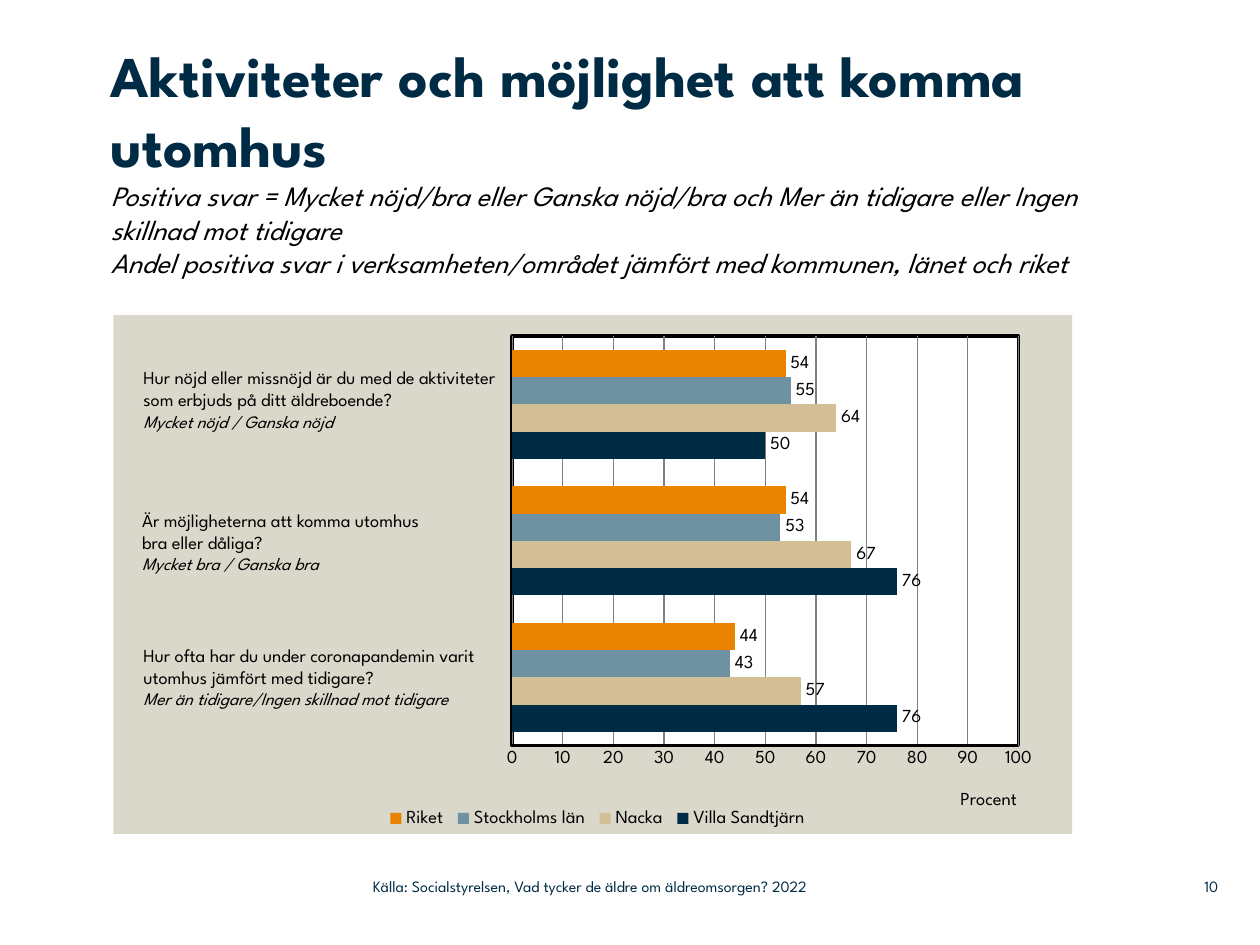
from dataclasses import dataclass

from lxml import etree
from pptx import Presentation
from pptx.chart.data import CategoryChartData
from pptx.dml.color import RGBColor as RGB
from pptx.enum.chart import XL_CHART_TYPE as ChartType
from pptx.enum.chart import XL_LABEL_POSITION as LabelPos
from pptx.enum.chart import XL_LEGEND_POSITION as LegendPos
from pptx.enum.chart import XL_TICK_MARK as Tick
from pptx.enum.text import MSO_ANCHOR as Anchor
from pptx.enum.text import PP_ALIGN as Align
from pptx.oxml import parse_xml
from pptx.oxml.ns import nsdecls, qn
from pptx.util import Pt


@dataclass(frozen=True)
class Theme:
    face: str = "League Spartan"
    navy: RGB = RGB(0x00, 0x2B, 0x45)
    black: RGB = RGB(0, 0, 0)
    white: RGB = RGB(0xFF, 0xFF, 0xFF)
    panel: RGB = RGB(0xDA, 0xD7, 0xCB)
    sand: RGB = RGB(0xD3, 0xBF, 0x96)
    steel: RGB = RGB(0x6F, 0x92, 0xA2)
    orange: RGB = RGB(0xE9, 0x83, 0x00)
    grid: RGB = RGB(0x80, 0x80, 0x80)
    title: float = 33
    subtitle: float = 16
    label: float = 10.5
    answer: float = 10
    footer: float = 9


T = Theme()


def add_text(box, lines, inset=0, anchor=Anchor.TOP, align=Align.LEFT):
    """Add a text box; each line is (text, size, colour, bold, italic)."""
    tf = s.shapes.add_textbox(*map(Pt, box)).text_frame
    tf.word_wrap = True
    tf.vertical_anchor = anchor
    tf.margin_left = tf.margin_right = Pt(inset)
    tf.margin_top = tf.margin_bottom = Pt(inset / 2)
    for i, (text, size, color, bold, italic) in enumerate(lines):
        p = tf.paragraphs[0] if i == 0 else tf.add_paragraph()
        p.text = text
        p.alignment = align
        p.font.name, p.font.size = T.face, Pt(size)
        p.font.bold, p.font.italic = bold, italic
        p.font.color.rgb = color


def place(element, before, target=None, **fractions):
    """Give a chart part a manual layout, in fractions of the chart."""
    for old in element.findall(qn("c:layout")):
        element.remove(old)
    layout = parse_xml(f"<c:layout {nsdecls('c')}><c:manualLayout/></c:layout>")
    values = {"layoutTarget": target} if target else {}
    values |= {"xMode": "edge", "yMode": "edge"} | fractions
    for tag, value in values.items():
        etree.SubElement(layout[0], qn(f"c:{tag}")).set("val", str(value))
    if before is None:
        element.insert(0, layout)
    else:
        element.find(qn(before)).addnext(layout)


prs = Presentation()
prs.slide_width, prs.slide_height = Pt(720), Pt(540)
s = prs.slides.add_slide(prs.slide_layouts[6])

# Title and subtitle
add_text((63.4, 23, 561.6, 136), [
    ("Aktiviteter och möjlighet att komma utomhus", T.title, T.navy, True, False),
    ("Positiva svar = Mycket nöjd/bra eller Ganska nöjd/bra och Mer än tidigare "
     "eller Ingen skillnad mot tidigare", T.subtitle, T.black, False, True),
    ("Andel positiva svar i verksamheten/området jämfört med kommunen, länet och riket",
     T.subtitle, T.black, False, True),
])

# Bar chart
series = [
    ("Villa Sandtjärn", (76, 76, 50), T.navy),
    ("Nacka", (57, 67, 64), T.sand),
    ("Stockholms län", (43, 53, 55), T.steel),
    ("Riket", (44, 54, 54), T.orange),
]
data = CategoryChartData()
data.categories = ["1", "2", "3"]
for name, values, _ in series:
    data.add_series(name, values)
chart = s.shapes.add_chart(
    ChartType.BAR_CLUSTERED, *map(Pt, (64.8, 180, 547.9, 296.6)), data).chart
chart.has_title = False
chart.font.name, chart.font.size = T.face, Pt(T.label)
chart.font.color.rgb = T.black

plot = chart.plots[0]
plot.gap_width, plot.overlap = 100, 0
plot.vary_by_categories = False
plot.has_data_labels = True
plot.data_labels.show_value = True
plot.data_labels.position = LabelPos.OUTSIDE_END
for bars, (_, _, color) in zip(plot.series, series):
    bars.format.fill.solid()
    bars.format.fill.fore_color.rgb = color

# Axes and legend
chart.category_axis.visible = False
axis = chart.value_axis
axis.minimum_scale, axis.maximum_scale, axis.major_unit = 0, 100, 10
axis.major_tick_mark = axis.minor_tick_mark = Tick.NONE
axis.format.line.color.rgb = T.black
axis.format.line.width = Pt(2)
axis.major_gridlines.format.line.color.rgb = T.grid
axis.major_gridlines.format.line.width = Pt(0.75)
p = axis.axis_title.text_frame.paragraphs[0]
p.text = "Procent"
p.font.name, p.font.size, p.font.bold = T.face, Pt(T.label), False
p.font.color.rgb = T.black
chart.has_legend = True
chart.legend.position = LegendPos.BOTTOM
chart.legend.include_in_layout = False

# Manual positions inside the chart
chart_space = chart.element
plot_area = chart_space.find(".//" + qn("c:plotArea"))
place(plot_area, None, "inner", x=0.416, y=0.041, w=0.528, h=0.789)
place(axis.axis_title.element if hasattr(axis.axis_title, "element")
      else plot_area.find(".//" + qn("c:title")), "c:tx", x=0.88, y=0.91)
place(chart_space.find(".//" + qn("c:legend")), "c:legendPos",
      x=0.28, y=0.95, w=0.45, h=0.05)

# Chart and plot backgrounds
plot_area.append(parse_xml(
    f'<c:spPr {nsdecls("c", "a")}><a:solidFill><a:srgbClr val="{T.white}"/></a:solidFill>'
    f'<a:ln w="{Pt(2)}"><a:solidFill><a:srgbClr val="{T.black}"/></a:solidFill></a:ln></c:spPr>'))
chart_space.find(qn("c:chart")).addnext(parse_xml(
    f'<c:spPr {nsdecls("c", "a")}><a:solidFill><a:srgbClr val="{T.panel}"/></a:solidFill>'
    '<a:ln><a:noFill/></a:ln></c:spPr>'))

# Questions beside the bars
questions = [
    (74.9, 205.9, ["Hur nöjd eller missnöjd är du med de aktiviteter som erbjuds "
                   "på ditt äldreboende?"], "Mycket nöjd / Ganska nöjd"),
    (74.2, 287.3, ["Är möjligheterna att komma utomhus", "bra eller dåliga?"],
     "Mycket bra / Ganska bra"),
    (74.9, 364.3, ["Hur ofta har du under coronapandemin varit utomhus jämfört "
                   "med tidigare?"], "Mer än tidigare/Ingen skillnad mot tidigare"),
]
for left, top, question, answer in questions:
    lines = [(text, T.label, T.black, False, False) for text in question]
    lines.append((answer, T.answer, T.black, False, True))
    add_text((left, top, 216.5, 58), lines, inset=7.2)

# Footer
for left, width, text, align in [
    (213.1, 319, "Källa: Socialstyrelsen, Vad tycker de äldre om äldreomsorgen? 2022", Align.LEFT),
    (662.4, 33.8, "10", Align.RIGHT),
]:
    add_text((left, 496, width, 21), [(text, T.footer, T.navy, False, False)],
             anchor=Anchor.MIDDLE, align=align)

prs.save("out.pptx")
